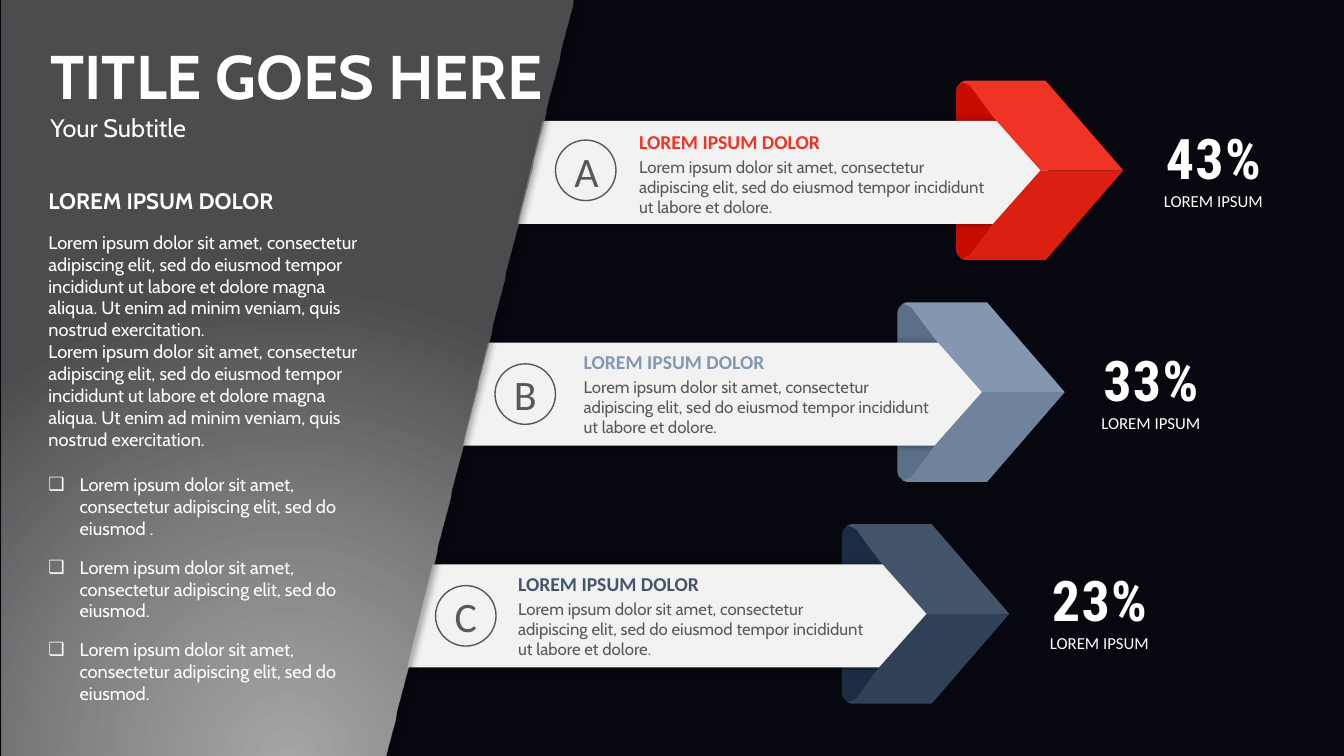
from dataclasses import dataclass

from lxml import etree
from pptx import Presentation
from pptx.dml.color import RGBColor
from pptx.enum import shapes, text
from pptx.oxml import parse_xml
from pptx.oxml.ns import nsdecls, qn
from pptx.util import Inches, Pt

WHITE, INK, PAPER = "FFFFFF", "585858", "F2F2F2"
HEADING = "LOREM IPSUM DOLOR"
NOTE = ("Lorem ipsum dolor sit amet, consectetur adipiscing elit, "
        "sed do eiusmod tempor incididunt ut labore et dolore.")
BODY = ("Lorem ipsum dolor sit amet, consectetur adipiscing elit, sed do eiusmod tempor "
        "incididunt ut labore et dolore magna aliqua. Ut enim ad minim veniam, "
        "quis nostrud exercitation.")
BULLET = "Lorem ipsum dolor sit amet, consectetur adipiscing elit, sed do eiusmod"
BULLETS = [BULLET + " .", BULLET + ".", BULLET + "."]

FIRST_TOP, ROW_PITCH = 0.81, 2.2
FOLD_WIDTH, FOLD_HEIGHT = 0.93, 1.76
BAR_DROP, BAR_HEIGHT, BAR_SLANT = 0.39, 1.02, 0.25
# Upper half of an arrowhead, measured from the top left of its fold
ARROW_HALF = [(0.09, -0.01), (0.89, -0.01), (1.66, 0.88), (0.84, 0.88),
              (0.37, 0.35), (0.14, 0.04), (0.1, 0.02), (0.07, 0.01), (0.04, 0.01)]

Point = tuple[float, float]


@dataclass
class Ribbon:
    letter: str
    percent: str
    fold_color: str
    upper_color: str
    lower_color: str
    fold_left: float
    bar_left: float
    bar_right: float
    badge: Point
    note: Point
    stat: Point


RIBBONS = [
    Ribbon("A", "43%", "C70C00", "EF3425", "DB2011", 9.48, 5.13, 10.39,
           (5.51, 1.39), (6.24, 1.24), (11.41, 1.2)),
    Ribbon("B", "33%", "5B6F89", "8397B1", "6F839D", 8.9, 4.59, 9.85,
           (4.91, 3.61), (5.69, 3.42), (10.79, 3.4)),
    Ribbon("C", "23%", "1C2C43", "44546B", "304057", 8.35, 4.04, 9.3,
           (4.32, 5.81), (5.04, 5.62), (10.28, 5.58)),
]


def rgb(value: str) -> RGBColor:
    return RGBColor.from_string(value)


def paint(shape, color: str) -> None:
    shape.fill.solid()
    shape.fill.fore_color.rgb = rgb(color)
    shape.line.fill.background()
    shape.shadow.inherit = False


def add_outline(page, points: list[Point], color: str):
    corners = [(Inches(x), Inches(y)) for x, y in points]
    builder = page.shapes.build_freeform(*corners[0])
    builder.add_line_segments(corners[1:], close=True)
    outline = builder.convert_to_shape()
    paint(outline, color)
    return outline


def add_shadow(shape, blur: int, distance: int) -> None:
    effects = shape.element.spPr.find(qn("a:effectLst"))
    effects.append(parse_xml(
        f'<a:outerShdw {nsdecls("a")} blurRad="{Pt(blur)}" dist="{Pt(distance)}" dir="0" '
        'algn="ctr" rotWithShape="0"><a:srgbClr val="000000"><a:alpha val="40000"/>'
        '</a:srgbClr></a:outerShdw>'))


def add_span(para, words: str, size: float, color: str, font: str = "Cabin",
             bold: bool = False):
    span = para.add_run()
    span.text = words
    span.font.size, span.font.name, span.font.bold = Pt(size), font, bold
    span.font.color.rgb = rgb(color)
    return span


def add_para(frame, before: float = 0, align=text.PP_ALIGN.LEFT, bullet: str = ""):
    """Start a paragraph, reusing the empty first one."""
    para = frame.paragraphs[0]
    if para.runs:
        para = frame.add_paragraph()
    props = para._p.get_or_add_pPr()
    indent = Inches(0.31) if bullet else 0
    props.set("marL", str(indent))
    props.set("indent", str(-indent))
    if bullet:
        etree.SubElement(props, qn("a:buChar")).set("char", bullet)
    else:
        etree.SubElement(props, qn("a:buNone"))
    para.alignment = align
    para.space_before = Pt(before)
    return para


def add_box(page, corner: Point, width: float, height: float):
    left, top = corner
    box = page.shapes.add_textbox(Inches(left), Inches(top), Inches(width), Inches(height))
    box.text_frame.word_wrap = True
    return box.text_frame


def place(holder, left: float, top: float, width: float, height: float):
    """Position a placeholder in front of everything drawn so far."""
    holder.left, holder.top = Inches(left), Inches(top)
    holder.width, holder.height = Inches(width), Inches(height)
    holder.element.getparent().append(holder.element)
    frame = holder.text_frame
    frame.word_wrap = True
    frame.auto_size = text.MSO_AUTO_SIZE.NONE
    frame.vertical_anchor = text.MSO_ANCHOR.TOP
    return frame


def draw_arrow(page, ribbon: Ribbon, top: float) -> None:
    left = ribbon.fold_left
    fold = page.shapes.add_shape(shapes.MSO_SHAPE.ROUNDED_RECTANGLE, Inches(left), Inches(top),
                                 Inches(FOLD_WIDTH), Inches(FOLD_HEIGHT))
    fold.adjustments[0] = 0.1
    paint(fold, ribbon.fold_color)
    bar_top = top + BAR_DROP
    bar_bottom = bar_top + BAR_HEIGHT
    bar = add_outline(page, [(ribbon.bar_left + BAR_SLANT, bar_top), (ribbon.bar_right, bar_top),
                             (ribbon.bar_right, bar_bottom), (ribbon.bar_left, bar_bottom)], PAPER)
    add_shadow(bar, 5, 0)
    add_outline(page, [(left + x, top + y) for x, y in ARROW_HALF], ribbon.upper_color)
    add_outline(page, [(left + x, top + FOLD_HEIGHT - y) for x, y in ARROW_HALF],
                ribbon.lower_color)


def draw_panel(page) -> None:
    panel = add_outline(page, [(0.02, 0), (5.69, 0), (3.83, 7.5), (0.02, 7.5)], INK)
    add_shadow(panel, 4, 3)
    stops = "".join(
        f'<a:gs pos="{spot * 1000}"><a:srgbClr val="{color}"><a:alpha val="75000"/></a:srgbClr></a:gs>'
        for spot, color in [(0, "DBDBDB"), (46, "AAAAAA"), (100, "636363")])
    props = panel.element.spPr
    props.replace(props.find(qn("a:solidFill")), parse_xml(
        f'<a:gradFill {nsdecls("a")} rotWithShape="1"><a:gsLst>{stops}</a:gsLst>'
        '<a:path path="circle"><a:fillToRect l="50000" t="130000" r="50000" b="-30000"/>'
        '</a:path></a:gradFill>'))


def draw_labels(page, ribbon: Ribbon) -> None:
    center = text.PP_ALIGN.CENTER
    left, top = ribbon.badge
    badge = page.shapes.add_shape(shapes.MSO_SHAPE.OVAL, Inches(left), Inches(top),
                                  Inches(0.6), Inches(0.6))
    badge.fill.background()
    badge.line.color.rgb, badge.line.width = rgb(INK), Pt(1)
    badge.shadow.inherit = False
    badge.text_frame.vertical_anchor = text.MSO_ANCHOR.MIDDLE
    add_span(add_para(badge.text_frame, align=center), ribbon.letter, 30, INK, "Calibri")

    note = add_box(page, ribbon.note, 3.72, 0.98)
    add_span(add_para(note), HEADING, 14, ribbon.upper_color, "Calibri", True)
    add_span(add_para(note, 2.4), NOTE, 12, INK)

    stat = add_box(page, ribbon.stat, 1.25, 0.94)
    stat.margin_left = stat.margin_right = Inches(0.07)
    stat.margin_top = stat.margin_bottom = Inches(0.03)
    percent = add_span(add_para(stat, align=center), ribbon.percent, 40, WHITE,
                       "Roboto Condensed", True)
    percent._r.get_or_add_rPr().set("spc", "100")
    add_span(add_para(stat, align=center), "LOREM IPSUM", 12, WHITE, "Calibri")


def main() -> None:
    deck = Presentation()
    deck.slide_width, deck.slide_height = Inches(13.33), Inches(7.5)
    page = deck.slides.add_slide(deck.slide_layouts[1])
    page.background.fill.solid()
    page.background.fill.fore_color.rgb = rgb("07080F")

    for row, ribbon in enumerate(RIBBONS):
        draw_arrow(page, ribbon, FIRST_TOP + row * ROW_PITCH)
    draw_panel(page)

    body = place(page.placeholders[1], 0.38, 1.81, 3.45, 5.27)
    add_span(add_para(body), HEADING, 16, WHITE, bold=True)
    for before in (12, 0):
        add_span(add_para(body, before), BODY, 13, WHITE)
    for before, words in zip((17, 12, 12), BULLETS):
        add_span(add_para(body, before, bullet="❑"), words, 13, WHITE)

    title = place(page.shapes.title, 0.4, 0.33, 6.5, 1.14)
    add_span(add_para(title), "TITLE GOES HERE", 44, WHITE, bold=True)
    add_span(add_para(title), "Your Subtitle", 18, WHITE)

    for ribbon in RIBBONS:
        draw_labels(page, ribbon)
    deck.save("out.pptx")


if __name__ == "__main__":
    main()
